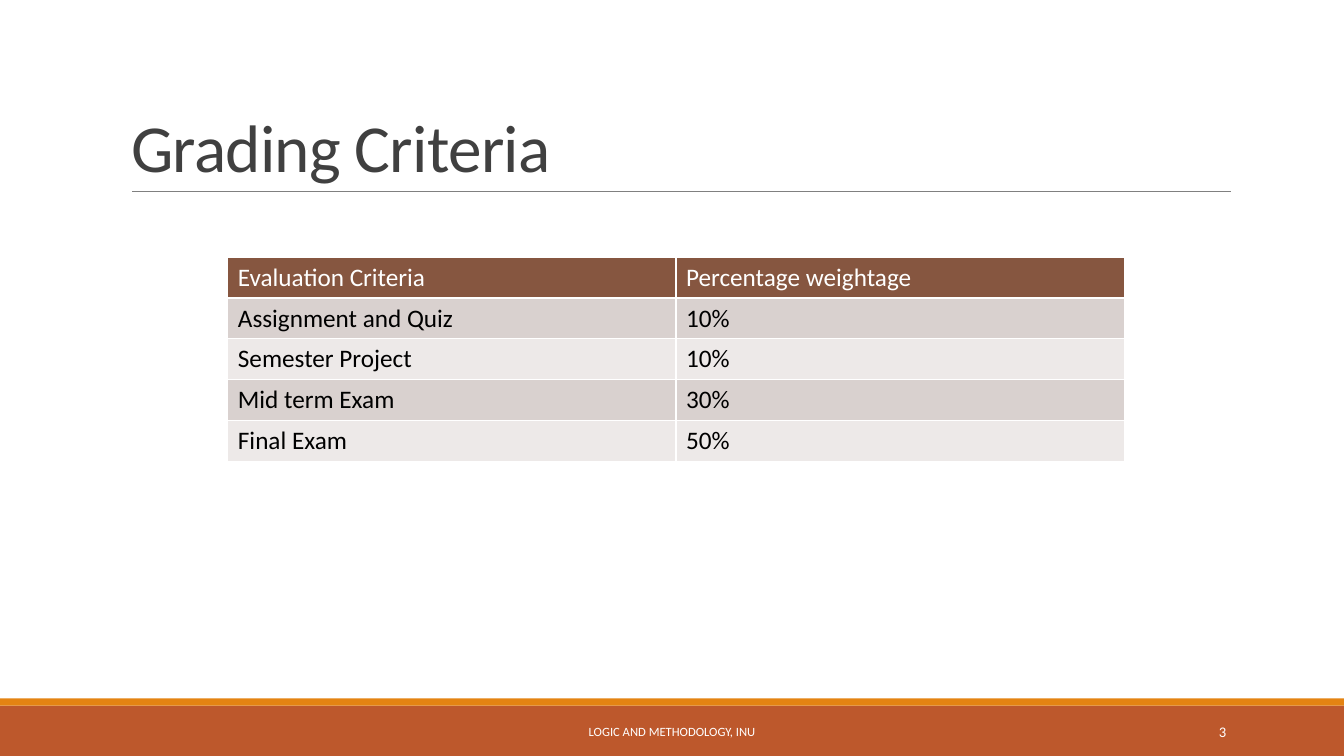
from lxml import etree
from pptx import Presentation
from pptx import util as u
from pptx.dml.color import RGBColor
from pptx.enum import shapes, text
from pptx.oxml import ns

Inches = u.Inches
ALIGN = text.PP_ALIGN
ANCHOR = text.MSO_ANCHOR
WHITE = "FFFFFF"
GRADES = [
    ("Evaluation Criteria", "Percentage weightage"),
    ("Assignment and Quiz", "10%"),
    ("Semester Project", "10%"),
    ("Mid term Exam", "30%"),
    ("Final Exam", "50%"),
]


def color(value):
    return RGBColor.from_string(value)


def box(left, top, width, height):
    return [Inches(length) for length in (left, top, width, height)]


class SlideBuilder:
    font = "Calibri"

    def __init__(self, presentation):
        self.slide = presentation.slides.add_slide(presentation.slide_layouts[5])

    def add_words(self, frame, words, size, ink, frame_format=None, **paragraph_format):
        for name, value in (frame_format or {}).items():
            setattr(frame, name, value)
        paragraph = frame.paragraphs[0]
        for name, value in paragraph_format.items():
            setattr(paragraph, name, value)
        run = paragraph.add_run()
        run.text = words
        for name, value in {"name": self.font, "size": u.Pt(size), "bold": False}.items():
            setattr(run.font, name, value)
        run.font.color.rgb = color(ink)
        return run

    def bar(self, top, height, fill):
        shape = self.slide.shapes.add_shape(
            shapes.MSO_SHAPE.RECTANGLE, *box(0, top, 13.33, height))
        shape.shadow.inherit = False
        shape.fill.solid()
        shape.fill.fore_color.rgb = color(fill)
        shape.line.fill.background()

    def rule(self, left, right, top, ink, width):
        line = self.slide.shapes.add_connector(
            shapes.MSO_CONNECTOR.STRAIGHT, *box(left, top, right, top))
        line.line.color.rgb = color(ink)
        line.line.width = u.Pt(width)
        etree.SubElement(line._element.spPr, ns.qn("a:effectLst"))

    def title(self, words, place):
        shape = self.slide.shapes.title
        shape.left, shape.top, shape.width, shape.height = box(*place)
        frame_format = {"vertical_anchor": ANCHOR.BOTTOM, "word_wrap": True,
                        "auto_size": text.MSO_AUTO_SIZE.NONE}
        run = self.add_words(shape.text_frame, words, 48, "404040", frame_format,
                             alignment=ALIGN.LEFT, line_spacing=0.85)
        run._r.get_or_add_rPr().set("spc", "-50")

    def label(self, words, place, size, alignment):
        shape = self.slide.shapes.add_textbox(*box(*place))
        frame_format = {"vertical_anchor": ANCHOR.MIDDLE, "word_wrap": True}
        self.add_words(shape.text_frame, words, size, WHITE, frame_format,
                       alignment=alignment)

    def borders(self, cell, ink, width):
        properties = cell._tc.get_or_add_tcPr()
        for side in ("lnL", "lnR", "lnT", "lnB"):
            line = etree.SubElement(properties, ns.qn(f"a:{side}"), w=str(u.Pt(width)))
            fill = etree.SubElement(line, ns.qn("a:solidFill"))
            etree.SubElement(fill, ns.qn("a:srgbClr"), val=ink)

    def table(self, rows, place, header_fill, band_fills):
        table = self.slide.shapes.add_table(len(rows), len(rows[0]), *box(*place)).table
        for row, values in enumerate(rows):
            fill = band_fills[(row - 1) % 2] if row else header_fill
            ink = "000000" if row else WHITE
            for column, words in enumerate(values):
                cell = table.cell(row, column)
                self.borders(cell, WHITE, 1)
                cell.fill.solid()
                cell.fill.fore_color.rgb = color(fill)
                self.add_words(cell.text_frame, words, 18, ink)


def main():
    presentation = Presentation()
    presentation.slide_width = Inches(13.33)
    presentation.slide_height = Inches(7.5)
    builder = SlideBuilder(presentation)
    builder.bar(7, 0.5, "BD582C")
    builder.bar(6.93, 0.07, "E48312")
    builder.rule(1.31, 12.21, 1.9, "808080", 0.5)
    builder.title("Grading Criteria", (1.2, 0.31, 11, 1.59))
    builder.table(GRADES, (2.26, 2.55, 8.89, 2.03), "865640", ("D9D1CF", "EDE9E8"))
    builder.label("LOGIC AND METHODOLOGY, INU", (4.03, 7.06, 5.27, 0.4), 9, ALIGN.CENTER)
    builder.label("3", (10.83, 7.06, 1.43, 0.4), 10.5, ALIGN.RIGHT)
    presentation.save("out.pptx")


if __name__ == "__main__":
    main()
